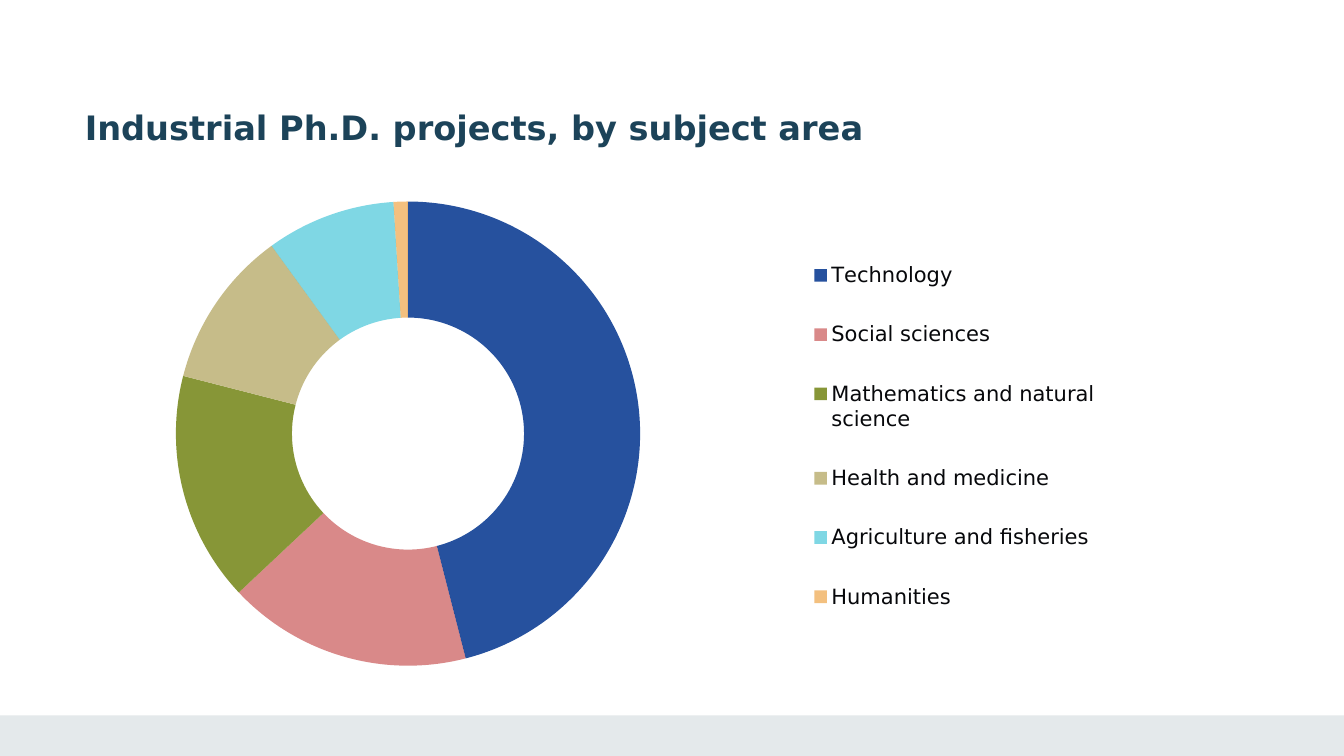
from dataclasses import dataclass

from lxml.etree import SubElement
from pptx import Presentation
from pptx.chart.data import CategoryChartData
from pptx.dml.color import RGBColor
from pptx.enum.chart import XL_CHART_TYPE, XL_LEGEND_POSITION
from pptx.enum.shapes import MSO_SHAPE
from pptx.oxml import parse_xml
from pptx.oxml.ns import nsdecls, qn
from pptx.util import Pt


@dataclass(frozen=True)
class Theme:
    heading: str = "1C4359"
    footer: str = "E4E9EB"
    chart_text: str = "07080B"
    font: str = "DejaVu Sans"
    chart_font: str = "Calibri"
    heading_size: int = 24
    legend_size: int = 15
    chart_size: int = 10


THEME = Theme()

# Subject area, share in percent, colour, opacity in percent
SUBJECT_AREAS = [
    ("Technology", 46, "26519E", 100),
    ("Social sciences", 17, "B41414", 50),
    ("Mathematics and natural science", 16, "879637", 100),
    ("Health and medicine", 11, "C6BC89", 100),
    ("Agriculture and fisheries", 9, "00B0CA", 50),
    ("Humanities", 1, "E98300", 50),
]


def style_font(font, name, size, color, bold=False):
    font.name = name
    font.size = Pt(size)
    font.bold = bold
    font.color.rgb = RGBColor.from_string(color)


def add_footer_band(slide, left, top, width, height):
    band = slide.shapes.add_shape(
        MSO_SHAPE.RECTANGLE, Pt(left), Pt(top), Pt(width), Pt(height))
    band.shadow.inherit = False
    band.fill.solid()
    band.fill.fore_color.rgb = RGBColor.from_string(THEME.footer)
    band.line.fill.background()


def add_heading(slide, wording, left, top, width, height):
    frame = slide.shapes.add_textbox(
        Pt(left), Pt(top), Pt(width), Pt(height)).text_frame
    frame.word_wrap = True
    frame.margin_left = frame.margin_top = frame.margin_right = Pt(3)
    frame.margin_bottom = Pt(3.6)
    heading = frame.paragraphs[0]
    heading.text = wording
    heading.line_spacing = 0.9
    style_font(heading.font, THEME.font, THEME.heading_size, THEME.heading, bold=True)


def manual_layout(x, y, w, h, inner=False):
    """Return a c:layout element whose lengths are fractions of the chart."""
    target = '<c:layoutTarget val="inner"/>' if inner else ""
    return parse_xml(
        f'<c:layout {nsdecls("c")}><c:manualLayout>{target}'
        '<c:xMode val="edge"/><c:yMode val="edge"/>'
        f'<c:x val="{x}"/><c:y val="{y}"/><c:w val="{w}"/><c:h val="{h}"/>'
        '</c:manualLayout></c:layout>')


def fill_slice(point, color, opacity):
    fill = point.format.fill
    fill.solid()
    fill.fore_color.rgb = RGBColor.from_string(color)
    point.format.line.fill.background()
    if opacity < 100:
        tint = point.format.fill._xPr.find(".//" + qn("a:srgbClr"))
        SubElement(tint, qn("a:alpha")).set("val", str(opacity * 1000))


def add_doughnut(slide, areas, left, top, width, height):
    shares = CategoryChartData()
    shares.categories = [name for name, *_ in areas]
    shares.add_series("Series 1", [share for _, share, *_ in areas])
    chart = slide.shapes.add_chart(
        XL_CHART_TYPE.DOUGHNUT, Pt(left), Pt(top), Pt(width), Pt(height), shares).chart
    style_font(chart.font, THEME.chart_font, THEME.chart_size, THEME.chart_text)
    chart.has_title = False
    chart.has_legend = True
    chart.legend.position = XL_LEGEND_POSITION.BOTTOM
    chart.legend.include_in_layout = False
    style_font(chart.legend.font, THEME.font, THEME.legend_size, THEME.chart_text)

    doughnut = chart.plots[0]
    doughnut.vary_by_categories = True
    for index, (*_, color, opacity) in enumerate(areas):
        fill_slice(doughnut.series[0].points[index], color, opacity)

    plot_area = chart.element.find(".//" + qn("c:plotArea"))
    for automatic in plot_area.findall(qn("c:layout")):
        plot_area.remove(automatic)
    plot_area.insert(0, manual_layout(0.03, 0.014, 0.468, 0.952, inner=True))
    legend = chart.element.find(".//" + qn("c:legend"))
    for automatic in legend.findall(qn("c:layout")):
        legend.remove(automatic)
    legend.find(qn("c:legendPos")).addnext(manual_layout(0.65, 0.07, 0.33, 0.85))


def main():
    presentation = Presentation()
    presentation.slide_width, presentation.slide_height = Pt(960), Pt(540)
    slide = presentation.slides.add_slide(presentation.slide_layouts[6])
    add_footer_band(slide, 0, 511, 960, 29)
    add_doughnut(slide, SUBJECT_AREAS, 104.4, 139, 708.5, 348.5)
    add_heading(slide, "Industrial Ph.D. projects, by subject area",
                57.6, 76.3, 708.5, 62.6)
    presentation.save("out.pptx")


if __name__ == "__main__":
    main()
